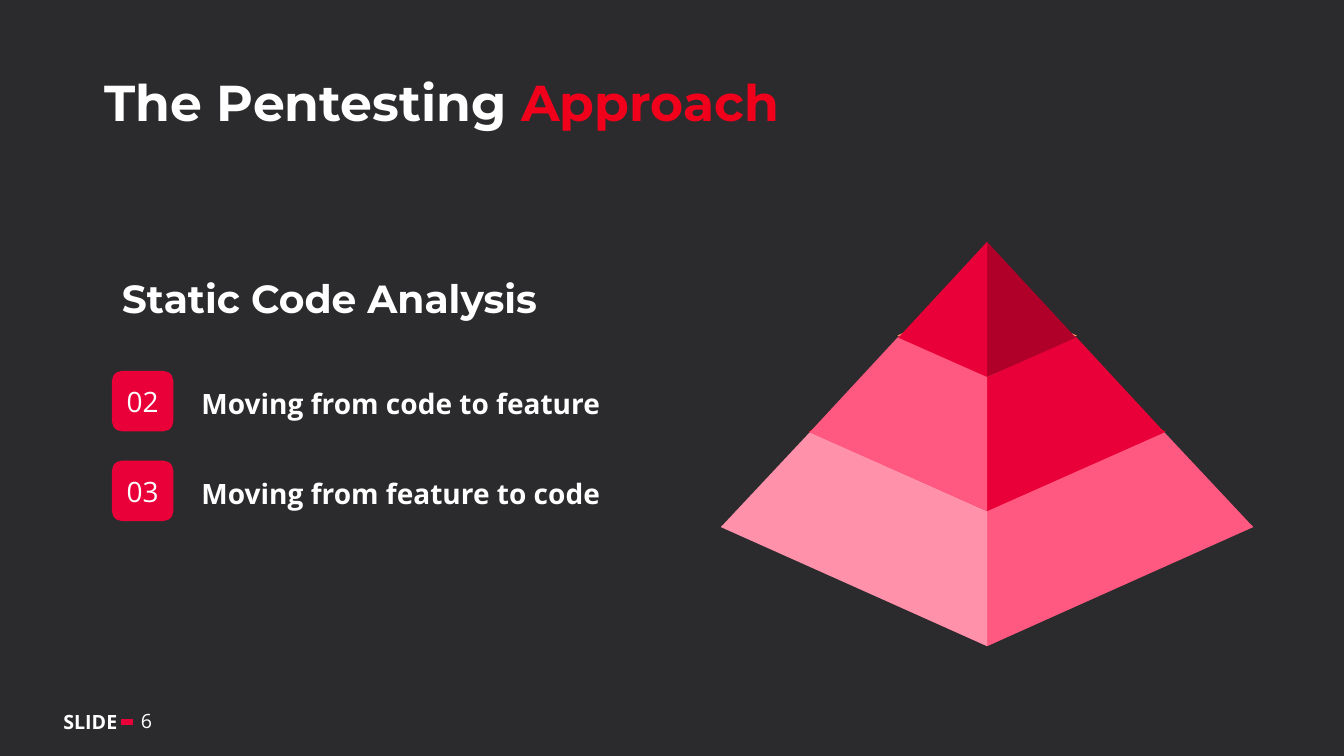
from pptx import Presentation
from pptx.dml.color import RGBColor
from pptx.enum.shapes import MSO_CONNECTOR, MSO_SHAPE
from pptx.enum.text import MSO_ANCHOR, PP_ALIGN
from pptx.oxml.ns import qn
from pptx.util import Pt
from lxml import etree

PX = 9144  # EMU: one px is a hundredth of an inch
ROUNDED = MSO_SHAPE.ROUNDED_RECTANGLE
STRAIGHT = MSO_CONNECTOR.STRAIGHT
MIDDLE = MSO_ANCHOR.MIDDLE
CENTER = PP_ALIGN.CENTER

HEADING, BODY = "Montserrat", "Open Sans"
WHITE, CRIMSON, RED = "FFFFFF", "EA0038", "F1001C"
ROSE, PINK, WINE, CORAL, CHARCOAL = "FF5981", "FF91AB", "B0002A", "FF8A66", "2B2B2D"

# Lid: half width, side y, back y, front y, colour.
# Faces: upper half width and y, ridge top, ridge foot, lower half width and y.
TIERS = [
    ((264, 282, 173, 401, ROSE), (175, 188, 266, 401, 264, 283), ROSE, PINK),
    ((177, 188, 116, 267, RED), (88, 94, 133, 267, 176, 189), CRIMSON, ROSE),
    ((89, 93, 50, 134, CORAL), (0, 0, 0, 134, 88, 95), WINE, CRIMSON),
]
STEPS = [("02", "Moving from code to feature"), ("03", "Moving from feature to code")]


def rgb(value):
    return RGBColor.from_string(value)


def px(*lengths):
    return [length * PX for length in lengths]


def add_span(para, text, size, font, color=WHITE, bold=False):
    span = para.add_run()
    span.text = text
    span.font.size = Pt(size)
    span.font.name = font
    span.font.bold = bold
    span.font.color.rgb = rgb(color)


def add_text(page, box, spans, size, font, bold=False, spacing=None):
    """Place one line of text made of (text, colour) spans."""
    frame = page.shapes.add_textbox(*px(*box)).text_frame
    frame.word_wrap = True
    para = frame.paragraphs[0]
    if spacing:
        para.line_spacing = spacing
    for text, color in spans:
        add_span(para, text, size, font, color, bold)


def paint(shape, color):
    shape.shadow.inherit = False
    shape.fill.solid()
    shape.fill.fore_color.rgb = rgb(color)
    shape.line.fill.background()


def add_polygon(page, points, color):
    builder = page.shapes.build_freeform(*points[0], scale=PX)
    builder.add_line_segments(points[1:], close=True)
    paint(builder.convert_to_shape(), color)


def add_pyramid(page, box):
    left, top, width, _ = box
    axis = left + width // 2

    def place(points):
        return [(axis + x, top + y) for x, y in points]

    for lid, face, right_color, left_color in TIERS:
        half, side, back, front, lid_color = lid
        rim = [(-half, side), (0, back), (half, side), (0, front)]
        add_polygon(page, place(rim), lid_color)
        upper, upper_y, ridge, foot, lower, lower_y = face
        for sign, color in ((1, right_color), (-1, left_color)):
            outline = [(sign * upper, upper_y), (0, ridge), (0, foot), (sign * lower, lower_y)]
            add_polygon(page, place(outline), color)


def add_step(page, box, number, label):
    left, top, width, height = box
    badge = page.shapes.add_shape(ROUNDED, *px(left, top, 61, height))
    paint(badge, CRIMSON)
    frame = badge.text_frame
    frame.word_wrap = False
    frame.vertical_anchor = MIDDLE
    para = frame.paragraphs[0]
    para.alignment = CENTER
    add_span(para, number, 20, BODY)
    add_text(page, (left + 79, top + 11, width - 79, 44), [(label, WHITE)], 20, BODY, bold=True)


def add_footer(page, box):
    left, top, _, height = box
    add_text(page, (left, top + 1, 82, height), [("SLIDE", WHITE)], 14, BODY, bold=True)
    add_text(page, (left + 77, top, 71, height), [("6", WHITE)], 14, BODY)
    dash_y = top + 18
    dash = page.shapes.add_connector(STRAIGHT, *px(left + 67, dash_y, left + 79, dash_y))
    dash.line.color.rgb = rgb(CRIMSON)
    dash.line.width = Pt(4.5)
    etree.SubElement(dash._element.spPr, qn("a:effectLst"))


def build_approach_slide(deck):
    page = deck.slides.add_slide(deck.slide_layouts[6])
    page.background.fill.solid()
    page.background.fill.fore_color.rgb = rgb(CHARCOAL)
    add_footer(page, (53, 698, 148, 34))
    add_pyramid(page, (715, 240, 528, 401))
    for index, (number, label) in enumerate(STEPS):
        add_step(page, (111, 368 + 89 * index, 543, 60), number, label)
    title = [("The Pentesting ", WHITE), ("Approach", RED)]
    add_text(page, (94, 72, 1239, 61), title, 36, HEADING, bold=True, spacing=0.9)
    subtitle = [("Static Code Analysis", WHITE)]
    add_text(page, (111, 272, 560, 61), subtitle, 28, HEADING, bold=True, spacing=0.9)


def main():
    deck = Presentation()
    deck.slide_width, deck.slide_height = px(1333, 750)
    build_approach_slide(deck)
    deck.save("out.pptx")


if __name__ == "__main__":
    main()
